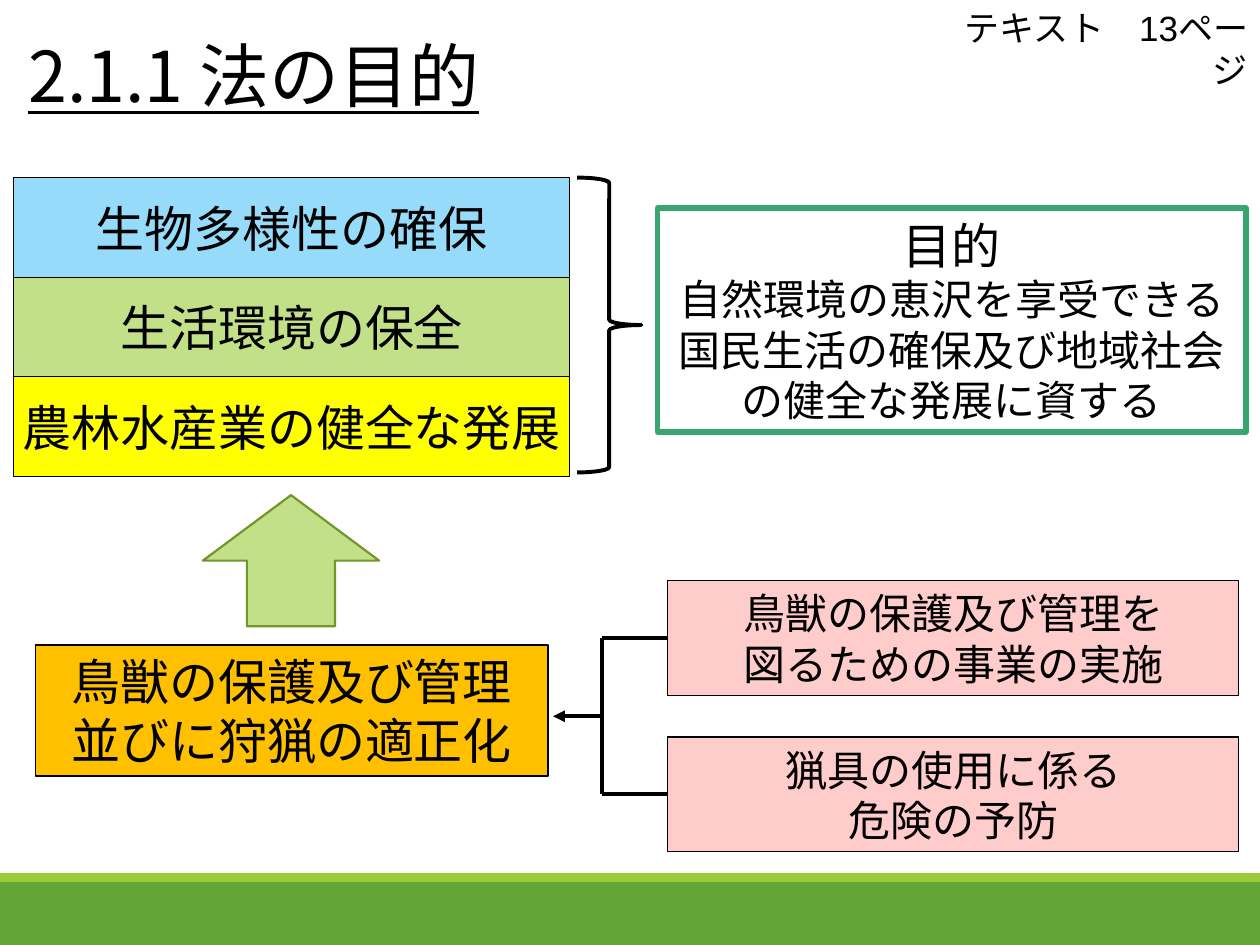
from dataclasses import dataclass
from typing import Optional

from lxml import etree
from pptx import Presentation
from pptx.dml.color import RGBColor
from pptx.enum import shapes as sh, text as tx
from pptx.oxml.ns import qn
from pptx.util import Inches, Pt


@dataclass(frozen=True)
class Theme:
    font: str = "Noto Sans CJK JP"
    label: str = "Arial"
    ink: str = "000000"
    white: str = "FFFFFF"
    blue: str = "97DBFB"
    green: str = "C2E088"
    yellow: str = "FFFF00"
    orange: str = "FFC000"
    pink: str = "FFCCCC"
    frame: str = "37A76F"
    edge: str = "719629"
    bar: str = "63A537"
    trim: str = "99CB38"
    title: int = 40
    large: int = 28
    mid: int = 24
    small: int = 20
    thin: float = 0.75
    thick: float = 2.25


T = Theme()
KIND = sh.MSO_SHAPE


@dataclass(frozen=True)
class Box:
    at: tuple
    fill: Optional[str]
    lines: tuple = ()
    sizes: tuple = (T.large,)
    line: Optional[str] = T.ink
    width: float = T.thin
    wrap: bool = False
    kind: int = KIND.RECTANGLE


def style(run, size: int, font: str = T.font) -> None:
    run.font.size = Pt(size)
    run.font.color.rgb = RGBColor.from_string(T.ink)
    run.font.name = font
    east = etree.SubElement(run.font._element, qn("a:ea"))
    east.set("typeface", T.font)


def draw(slide, box: Box):
    shape = slide.shapes.add_shape(box.kind, *map(Inches, box.at))
    shape.shadow.inherit = False
    if box.fill:
        shape.fill.solid()
        shape.fill.fore_color.rgb = RGBColor.from_string(box.fill)
    else:
        shape.fill.background()
    if box.line:
        shape.line.color.rgb = RGBColor.from_string(box.line)
        shape.line.width = Pt(box.width)
    else:
        shape.line.fill.background()
    if box.lines:
        frame = shape.text_frame
        frame.text = "\n".join(box.lines)
        frame.word_wrap = box.wrap
        frame.vertical_anchor = tx.MSO_ANCHOR.MIDDLE
        for i, para in enumerate(frame.paragraphs):
            para.alignment = tx.PP_ALIGN.CENTER
            style(para.runs[0], box.sizes[min(i, len(box.sizes) - 1)])
    return shape


def link(slide, start: tuple, end: tuple, arrow: bool = False):
    line = slide.shapes.add_connector(
        sh.MSO_CONNECTOR.STRAIGHT, *map(Inches, start + end))
    line.line.color.rgb = RGBColor.from_string(T.ink)
    line.line.width = Pt(T.thick)
    props = line._element.spPr
    if arrow:
        tail = etree.SubElement(props.find(qn("a:ln")), qn("a:tailEnd"))
        tail.set("type", "triangle")
    etree.SubElement(props, qn("a:effectLst"))
    return line


def head(slide) -> None:
    # Title placeholder: a plain leading space, then the underlined heading
    title = slide.shapes.title
    title.left, title.top = Inches(0), Inches(0.33)
    title.width, title.height = Inches(9.15), Inches(0.81)
    frame = title.text_frame
    frame.vertical_anchor = tx.MSO_ANCHOR.TOP
    frame.margin_top = 0
    para = frame.paragraphs[0]
    para.alignment = tx.PP_ALIGN.LEFT
    para.line_spacing = 0.9
    for words, under in ((" ", False), ("2.1.1 法の目的", True)):
        run = para.add_run()
        run.text = words
        style(run, T.title)
        run.font.underline = under

    # Page reference
    note = slide.shapes.add_textbox(*map(Inches, (7.46, 0, 2.54, 0.44)))
    note.text_frame.word_wrap = True
    note.text_frame.text = "テキスト　13ページ"
    para = note.text_frame.paragraphs[0]
    para.alignment = tx.PP_ALIGN.RIGHT
    style(para.runs[0], T.small, T.label)


def main() -> None:
    deck = Presentation()
    deck.slide_width, deck.slide_height = Inches(10), Inches(7.5)
    slide = deck.slides.add_slide(deck.slide_layouts[5])

    # Footer bars
    draw(slide, Box((0, 7, 10, 0.5), T.bar, line=None))
    draw(slide, Box((0, 6.93, 10, 0.07), T.trim, line=None))
    head(slide)

    # Three stacked aims, braced into the purpose
    aims = (("生物多様性の確保", T.blue), ("生活環境の保全", T.green),
            ("農林水産業の健全な発展", T.yellow))
    for i, (words, fill) in enumerate(aims):
        draw(slide, Box((0.11, 1.41 + 0.79 * i, 4.41, 0.79), fill, (words,)))
    draw(slide, Box((4.58, 1.41, 0.51, 2.34), None, width=T.thick,
                    kind=KIND.RIGHT_BRACE))
    draw(slide, Box(
        (5.22, 1.65, 4.67, 1.78), T.white,
        ("目的", "自然環境の恵沢を享受できる国民生活の確保及び地域社会の健全な発展に資する"),
        (T.large, T.mid), T.frame, 3, True))

    # Means, with an arrow up to the aims
    draw(slide, Box((0.28, 5.12, 4.07, 1.04), T.orange,
                    ("鳥獣の保護及び管理", "並びに狩猟の適正化"), wrap=True))
    draw(slide, Box((1.61, 3.93, 1.4, 1.04), T.green, line=T.edge,
                    width=1.25, kind=KIND.UP_ARROW))

    # Two measures, bracketed into the means
    trunk, high = 4.78, 0.91
    tops = (4.61, 5.85)
    mids = [top + high / 2 for top in tops]
    words = (("鳥獣の保護及び管理を", "図るための事業の実施"),
             ("猟具の使用に係る", "危険の予防"))
    for top, mid, lines in zip(tops, mids, words):
        box = draw(slide, Box((5.3, top, 4.53, high), T.pink, lines, (T.mid,)))
        link(slide, (trunk, mid), (5.3, mid)).end_connect(box, 1)
    link(slide, (trunk, mids[0]), (trunk, mids[1]))
    link(slide, (trunk, sum(mids) / 2), (4.39, sum(mids) / 2), arrow=True)

    deck.save("out.pptx")


if __name__ == "__main__":
    main()
